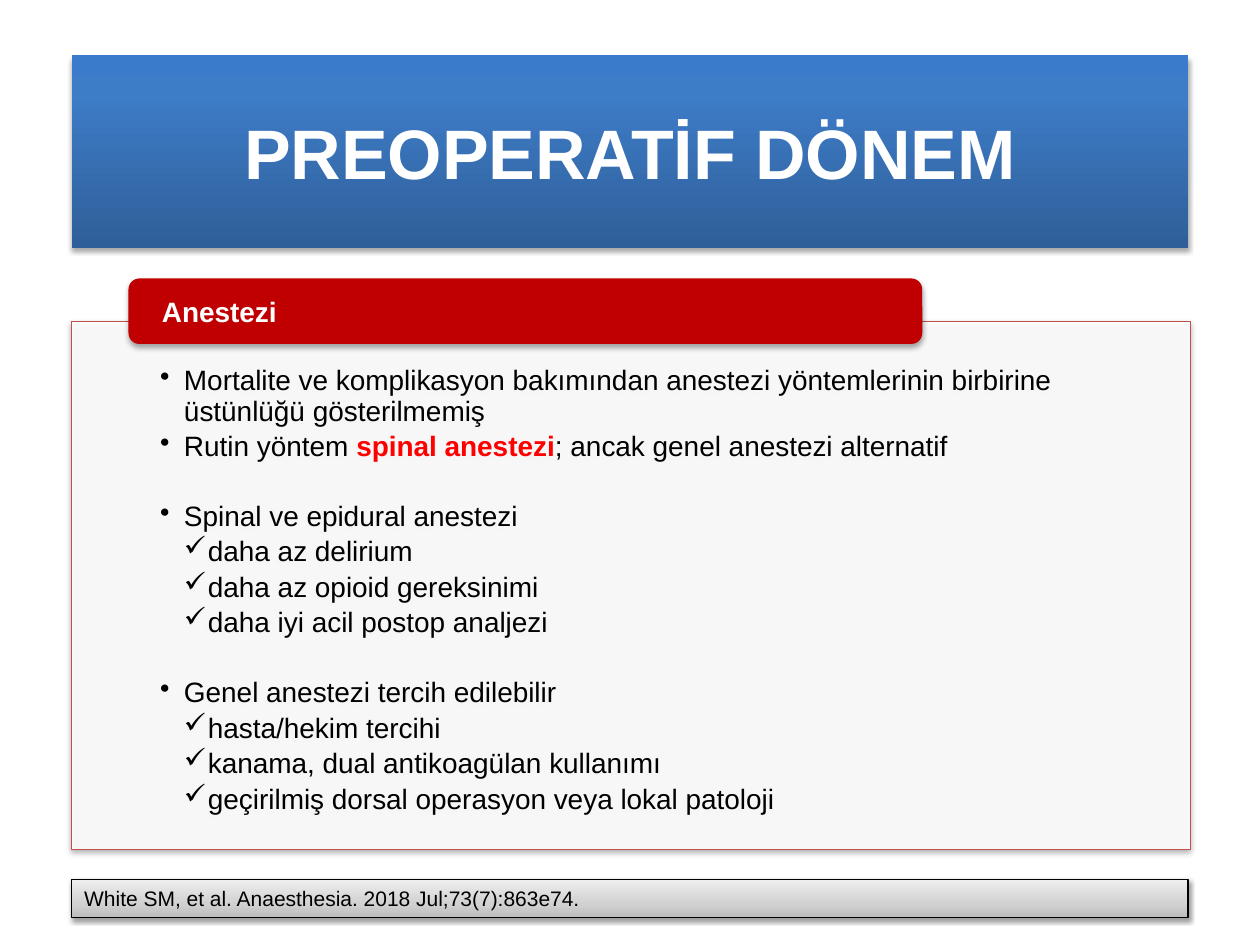
"""Build the preoperative anaesthesia slide."""
from dataclasses import dataclass
from typing import Optional

from lxml import etree
from pptx import Presentation
from pptx import util as u
from pptx.dml.color import RGBColor
from pptx.enum import shapes, text
from pptx.oxml import ns

FONT = "Arial"


@dataclass
class Box:
    """A filled shape with a soft shadow."""
    at: tuple
    fill: Optional[str] = None
    stops: tuple = ()
    line: Optional[str] = None
    alpha: int = 100
    kind: shapes.MSO_SHAPE = shapes.MSO_SHAPE.RECTANGLE
    shadow: tuple = (35, 1.8)


@dataclass
class Item:
    """A bulleted line made of (wording, colour, bold) phrases."""
    phrases: tuple
    level: int = 1
    before: float = 0


def rgb(value: str) -> RGBColor:
    """Turn a hex string into a colour."""
    return RGBColor.from_string(value)


def add(parent, tag: str, **attrs):
    """Append a DrawingML element."""
    return etree.SubElement(parent, ns.qn(tag), {k: str(v) for k, v in attrs.items()})


def add_color(parent, value: str, alpha: int = 100) -> None:
    """Append a colour with its opacity in percent."""
    clr = add(parent, "a:srgbClr", val=value)
    if alpha < 100:
        add(clr, "a:alpha", val=alpha * 1000)


def draw_box(slide, box: Box):
    """Draw a box with its fill, line and shadow."""
    sp = slide.shapes.add_shape(box.kind, *map(u.Inches, box.at))
    sp_pr = sp._element.spPr
    fill = add(sp_pr, "a:gradFill" if box.stops else "a:solidFill")
    if box.stops:
        stops = add(fill, "a:gsLst")
        for pos, value in box.stops:
            add_color(add(stops, "a:gs", pos=pos * 1000), value)
        add(fill, "a:lin", ang=270 * 60000, scaled=0)
    else:
        add_color(fill, box.fill, box.alpha)
    if box.line:
        sp.line.color.rgb = rgb(box.line)
        sp.line.width = u.Pt(0.75)
    else:
        sp.line.fill.background()
    sp.shadow.inherit = False
    alpha, dist = box.shadow
    outer = add(sp_pr.find(ns.qn("a:effectLst")), "a:outerShdw", blurRad=u.Pt(3.1),
                dist=u.Pt(dist), dir=90 * 60000, rotWithShape=0)
    add_color(outer, "000000", alpha)
    return sp


def set_frame(sp, insets: tuple, anchor):
    """Set the insets and anchor of a text frame."""
    tf = sp.text_frame
    sides = ("margin_left", "margin_top", "margin_right", "margin_bottom")
    formats = {"word_wrap": True, "vertical_anchor": anchor,
               **dict(zip(sides, map(u.Inches, insets)))}
    for name, value in formats.items():
        setattr(tf, name, value)
    return tf


def add_run(p, wording: str, size: float, color: str, bold: bool = False) -> None:
    """Add a formatted run to a paragraph."""
    r = p.add_run()
    r.text = wording
    for name, value in {"name": FONT, "size": u.Pt(size), "bold": bold}.items():
        setattr(r.font, name, value)
    r.font.color.rgb = rgb(color)


def write_label(sp, wording: str, size: float, color: str, bold: bool = False,
                align=text.PP_ALIGN.LEFT, insets: tuple = (0.1, 0.05, 0.1, 0.05)) -> None:
    """Write one vertically centred line in a shape."""
    p = set_frame(sp, insets, text.MSO_ANCHOR.MIDDLE).paragraphs[0]
    p.alignment = align
    add_run(p, wording, size, color, bold)


def write_items(sp, items: list) -> None:
    """Write the bulleted lines in the panel."""
    tf = set_frame(sp, (0.7, 0.36, 0.7, 0.12), text.MSO_ANCHOR.TOP)
    for i, item in enumerate(items):
        p = tf.add_paragraph() if i else tf.paragraphs[0]
        p_pr = p._p.get_or_add_pPr()
        p_pr.set("marL", str(u.Inches(0.19 * item.level)))
        p_pr.set("indent", str(u.Inches(-0.19)))
        add(p_pr, "a:buChar", char="•" if item.level == 1 else "✓")
        formats = {"alignment": text.PP_ALIGN.LEFT, "level": item.level, "line_spacing": 0.9,
                   "space_before": u.Pt(item.before), "space_after": u.Pt(3)}
        for name, value in formats.items():
            setattr(p, name, value)
        for wording, color, bold in item.phrases:
            add_run(p, wording, 16, color, bold)


def plain(wording: str, level: int = 1, before: float = 0) -> Item:
    """Make an item of one black phrase."""
    return Item(((wording, "000000", False),), level, before)


GAP = 19.7
ITEMS = [
    plain("Mortalite ve komplikasyon bakımından anestezi yöntemlerinin birbirine "
          "üstünlüğü gösterilmemiş"),
    Item((("Rutin yöntem ", "000000", False), ("spinal anestezi", "FF0000", True),
          ("; ancak genel anestezi alternatif", "000000", False))),
    plain("Spinal ve epidural anestezi", before=GAP),
    plain("daha az delirium", 2),
    plain("daha az opioid gereksinimi", 2),
    plain("daha iyi acil postop analjezi", 2),
    plain("Genel anestezi tercih edilebilir", before=GAP),
    plain("hasta/hekim tercihi", 2),
    plain("kanama, dual antikoagülan kullanımı", 2),
    plain("geçirilmiş dorsal operasyon veya lokal patoloji", 2),
]
PANEL = Box((0.57, 2.55, 8.88, 4.19), "FFFFFF", line="C0504D", alpha=90)
TAB = Box((1.02, 2.21, 6.3, 0.52), "C00000", kind=shapes.MSO_SHAPE.ROUNDED_RECTANGLE)
TITLE = Box((0.57, 0.44, 8.86, 1.53),
            stops=((0, "2F5F99"), (80, "3D7CC7"), (100, "3A7CCB")))
SOURCE = Box((0.57, 6.98, 8.86, 0.3), line="000000", shadow=(38, 1.6),
             stops=((0, "BDBDBD"), (35, "D1D1D1"), (100, "EEEEEE")))


def main() -> None:
    """Build and save the slide."""
    prs = Presentation()
    prs.slide_width, prs.slide_height = u.Inches(10), u.Inches(7.5)
    s = prs.slides.add_slide(prs.slide_layouts[6])
    write_items(draw_box(s, PANEL), ITEMS)
    write_label(draw_box(s, TAB), "Anestezi", 16, "FFFFFF", True, insets=(0.24, 0, 0.24, 0))
    write_label(draw_box(s, TITLE), "PREOPERATİF DÖNEM", 40, "FFFFFF", True,
                text.PP_ALIGN.CENTER)
    write_label(draw_box(s, SOURCE), "White SM, et al. Anaesthesia. 2018 Jul;73(7):863e74.",
                12, "000000")
    prs.save("out.pptx")


if __name__ == "__main__":
    main()
